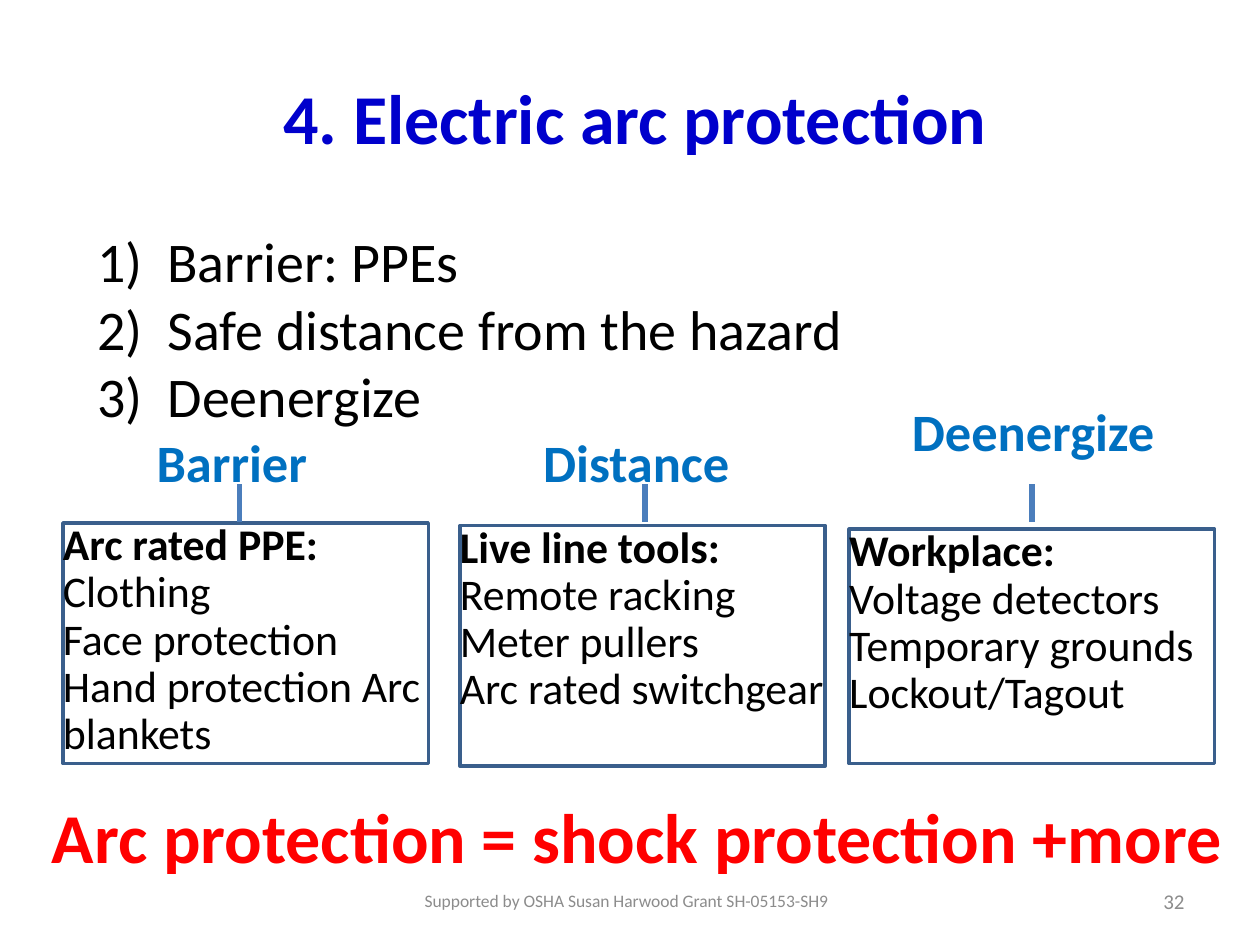
from lxml.etree import SubElement
from pptx import Presentation
from pptx.dml.color import RGBColor
from pptx.enum.shapes import MSO_CONNECTOR, MSO_SHAPE
from pptx.enum.text import MSO_ANCHOR, MSO_AUTO_SIZE, PP_ALIGN
from pptx.oxml.ns import qn
from pptx.util import Inches, Pt

CELL = Inches(0.1)  # the slide is a grid of 100 columns by 75 rows
BLUE, SKY, RED, GREY, BLACK = "0000CC", "0070C0", "FF0000", "8C8C8C", "000000"
BORDER, STEM = "3A5F8C", "4B7EBC"

MEASURES = ["Barrier: PPEs", "Safe distance from the hazard", "Deenergize"]

# heading, heading box, heading insets (right, bottom), stem column, panel box, panel lines
COLUMNS = [
    ("Barrier", (8.9, 33.3, 20, 6.7), (1, 0), 19, (5, 41.5, 29, 19.1),
     ["Arc rated PPE:", "Clothing", "Face protection", "Hand protection Arc blankets"]),
    ("Distance", (41, 33.3, 20, 6.7), (1, 0), 51.2, (36.5, 41.7, 29, 19.1),
     ["Live line tools:", "Remote racking Meter pullers", "Arc rated switchgear"]),
    ("Deenergize", (72, 33.3, 20, 6.7), (0, 5), 81.9, (67.4, 42, 29, 18.6),
     ["Workplace:", "Voltage detectors", "Temporary grounds", "Lockout/Tagout"]),
]


def grid(*cells):
    return [round(cell * CELL) for cell in cells]


def colour(hex_string):
    return RGBColor.from_string(hex_string)


def place(shape, box):
    shape.left, shape.top, shape.width, shape.height = grid(*box)


def set_insets(frame, right=0, bottom=0):
    frame.margin_left = frame.margin_top = 0
    frame.margin_right, frame.margin_bottom = grid(right, bottom)


def style(para, size, hex_string, bold=False, align=PP_ALIGN.LEFT):
    para.alignment = align
    for span in para.runs:
        span.font.name = "Calibri"
        span.font.size = Pt(size)
        span.font.bold = bold
        span.font.color.rgb = colour(hex_string)


def add_label(page, box, text, size, hex_string, bold=False,
              align=PP_ALIGN.CENTER, anchor=MSO_ANCHOR.MIDDLE):
    label = page.shapes.add_textbox(*grid(*box))
    frame = label.text_frame
    frame.word_wrap = True
    frame.vertical_anchor = anchor
    frame.text = text
    style(frame.paragraphs[0], size, hex_string, bold, align)
    return label


def fill_title(page, box):
    title = page.shapes.title
    place(title, box)
    frame = title.text_frame
    frame.text = "4. Electric arc protection"
    frame.vertical_anchor = MSO_ANCHOR.MIDDLE
    style(frame.paragraphs[0], 40, BLUE, True, PP_ALIGN.CENTER)


def fill_measures(page, box):
    body = page.placeholders[1]
    place(body, box)
    frame = body.text_frame
    frame.auto_size = MSO_AUTO_SIZE.NONE
    frame.text = "\n".join(MEASURES)
    indent = Inches(0.56)
    for para in frame.paragraphs:
        style(para, 32, BLACK)
        para.space_before = Pt(0)
        properties = para._p.get_or_add_pPr()
        properties.set("marL", str(indent))
        properties.set("indent", str(-indent))
        SubElement(properties, qn("a:buFont"), typeface="+mj-lt")
        SubElement(properties, qn("a:buAutoNum"), type="arabicParenR")


def add_panel(page, box, lines):
    panel = page.shapes.add_shape(MSO_SHAPE.RECTANGLE, *grid(*box))
    panel.shadow.inherit = False
    panel.fill.background()
    panel.line.color.rgb = colour(BORDER)
    panel.line.width = Pt(2)
    frame = panel.text_frame
    frame.word_wrap = True
    frame.vertical_anchor = MSO_ANCHOR.TOP
    set_insets(frame)
    frame.text = "\n".join(lines)
    for number, para in enumerate(frame.paragraphs):
        style(para, 25, BLACK, bold=number == 0)
        para.line_spacing = 0.9


def add_stem(page, column, top, bottom):
    stem = page.shapes.add_connector(
        MSO_CONNECTOR.STRAIGHT, *grid(column, bottom, column, top))
    stem.line.color.rgb = colour(STEM)
    stem.line.width = Pt(3)
    SubElement(stem._element.spPr, qn("a:effectLst"))


def add_column(page, heading, heading_box, insets, stem_column, panel_box, lines):
    label = add_label(page, heading_box, heading, 30, SKY, bold=True)
    set_insets(label.text_frame, *insets)
    add_panel(page, panel_box, lines)
    add_stem(page, stem_column, 38.4, 41.4)


def add_footer(page, top, height):
    add_label(page, (31.8, top, 35.8, height),
              "Supported by OSHA Susan Harwood Grant SH-05153-SH9", 10, GREY)
    add_label(page, (71.7, top, 23.3, height), "32", 12, GREY, align=PP_ALIGN.RIGHT)


def main():
    deck = Presentation()
    deck.slide_width, deck.slide_height = grid(100, 75)
    page = deck.slides.add_slide(deck.slide_layouts[1])
    fill_title(page, (2.5, 3, 95.8, 12.5))
    fill_measures(page, (6.7, 17.5, 88.3, 18.3))
    for column in COLUMNS:
        add_column(page, *column)
    add_label(page, (2.2, 62.5, 96.7, 9.4), "Arc protection = shock protection +more",
              40, RED, bold=True, anchor=MSO_ANCHOR.TOP)
    add_footer(page, 69.5, 4)
    deck.save("out.pptx")


if __name__ == "__main__":
    main()
